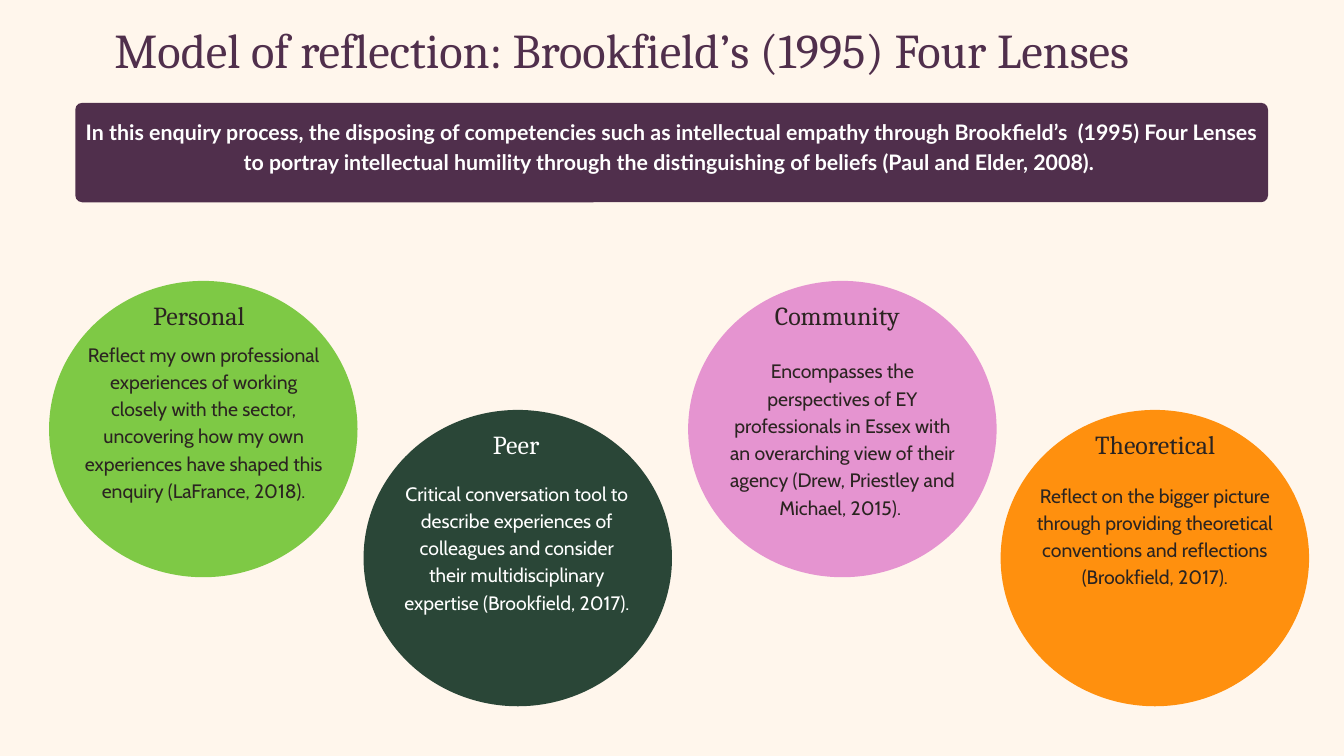
from pptx import Presentation
from pptx.dml.color import RGBColor
from pptx.enum.shapes import MSO_SHAPE
from pptx.enum.text import MSO_ANCHOR, PP_ALIGN
from pptx.util import Inches, Pt

CENTER = PP_ALIGN.CENTER
TOP, MIDDLE = MSO_ANCHOR.TOP, MSO_ANCHOR.MIDDLE
OVAL, ROUNDED = MSO_SHAPE.OVAL, MSO_SHAPE.ROUNDED_RECTANGLE

CREAM = RGBColor(0xFF, 0xF6, 0xEC)
PLUM = RGBColor(0x50, 0x2F, 0x4C)
WHITE = RGBColor(0xFF, 0xFF, 0xFF)
INK = RGBColor(0x2B, 0x24, 0x21)
GREEN = RGBColor(0x7E, 0xC9, 0x45)
FOREST = RGBColor(0x2A, 0x46, 0x37)
PINK = RGBColor(0xE5, 0x94, 0xD0)
ORANGE = RGBColor(0xFF, 0x90, 0x0E)

presentation = Presentation()
presentation.slide_width = Inches(20)
presentation.slide_height = Inches(11.25)
COLUMN = presentation.slide_width / 20
ROW = presentation.slide_height / 11.25


def grid(left, top, width, height):
    """Turn columns and rows into slide lengths."""
    return (round(left * COLUMN), round(top * ROW),
            round(width * COLUMN), round(height * ROW))


def write(shape, text, font_name, size, color, line_spacing,
          anchor=TOP, insets=(0, 0, 0, 0), bold=False):
    """Fill a shape with one centred paragraph; insets run left, top, right, bottom."""
    frame = shape.text_frame
    frame.word_wrap = True
    frame.vertical_anchor = anchor
    (frame.margin_left, frame.margin_top,
     frame.margin_right, frame.margin_bottom) = map(Inches, insets)
    paragraph = frame.paragraphs[0]
    paragraph.text = text
    paragraph.alignment = CENTER
    paragraph.line_spacing = Pt(line_spacing)
    font = paragraph.font
    font.name, font.size, font.bold = font_name, Pt(size), bold
    font.color.rgb = color


slide = presentation.slides.add_slide(presentation.slide_layouts[5])
slide.background.fill.solid()
slide.background.fill.fore_color.rgb = CREAM

title = slide.shapes.title
title.left, title.top, title.width, title.height = grid(0.38, 0.15, 17.75, 0.97)
write(title, "Model of reflection: Brookfield’s (1995) Four Lenses",
      "Cambria", 52, PLUM, 72.8)

banner = slide.shapes.add_shape(ROUNDED, *grid(1.12, 1.53, 17.75, 1.48))
banner.adjustments[0] = 0.07
banner.shadow.inherit = False
banner.fill.solid()
banner.fill.fore_color.rgb = PLUM
banner.line.fill.background()
write(banner,
      "In this enquiry process, the disposing of competencies such as intellectual "
      "empathy through Brookfield’s  (1995) Four Lenses to portray intellectual "
      "humility through the distinguishing of beliefs (Paul and Elder, 2008). ",
      "Lato", 22.9, WHITE, 32, MIDDLE, (0.03, 0.03, 0.03, 0.27), True)

HIGH, LOW = 4.18, 6.1
LENS_WIDTH, LENS_HEIGHT = 4.59, 4.41
HEADING_WIDTH, HEADING_HEIGHT, HEADING_DROP = 4.72, 0.5, 0.2

# heading, lens left, lens top, fill, text colour, heading left, body box, body text
lenses = [
    ("Personal", 0.73, HIGH, GREEN, INK, 0.6, (1.23, 5.04, 3.6, 2.76),
     "Reflect my own professional experiences of working closely with the sector, "
     "uncovering how my own experiences have shaped this enquiry (LaFrance, 2018)."),
    ("Peer", 5.41, LOW, FOREST, WHITE, 5.32, (5.99, 7.11, 3.4, 2.76),
     "Critical conversation tool to describe experiences of colleagues and consider "
     "their multidisciplinary expertise (Brookfield, 2017)."),
    ("Community", 10.24, HIGH, PINK, INK, 10.1, (10.77, 5.29, 3.53, 2.78),
     "Encompasses the perspectives of EY professionals in Essex with an overarching "
     "view of their agency (Drew, Priestley and Michael, 2015). "),
    ("Theoretical", 14.89, LOW, ORANGE, INK, 14.83, (15.38, 7.14, 3.61, 1.97),
     "Reflect on the bigger picture through providing theoretical conventions and "
     "reflections (Brookfield, 2017)."),
]

for heading, left, top, fill, color, heading_left, body_box, body in lenses:
    lens = slide.shapes.add_shape(OVAL, *grid(left, top, LENS_WIDTH, LENS_HEIGHT))
    lens.shadow.inherit = False
    lens.fill.solid()
    lens.fill.fore_color.rgb = fill
    lens.line.fill.background()

    heading_box = slide.shapes.add_textbox(
        *grid(heading_left, top + HEADING_DROP, HEADING_WIDTH, HEADING_HEIGHT))
    write(heading_box, heading, "Cambria", 27.8, color, 39)
    write(slide.shapes.add_textbox(*grid(*body_box)), body, "Cabin", 20.8, color, 29.2)

presentation.save("out.pptx")
